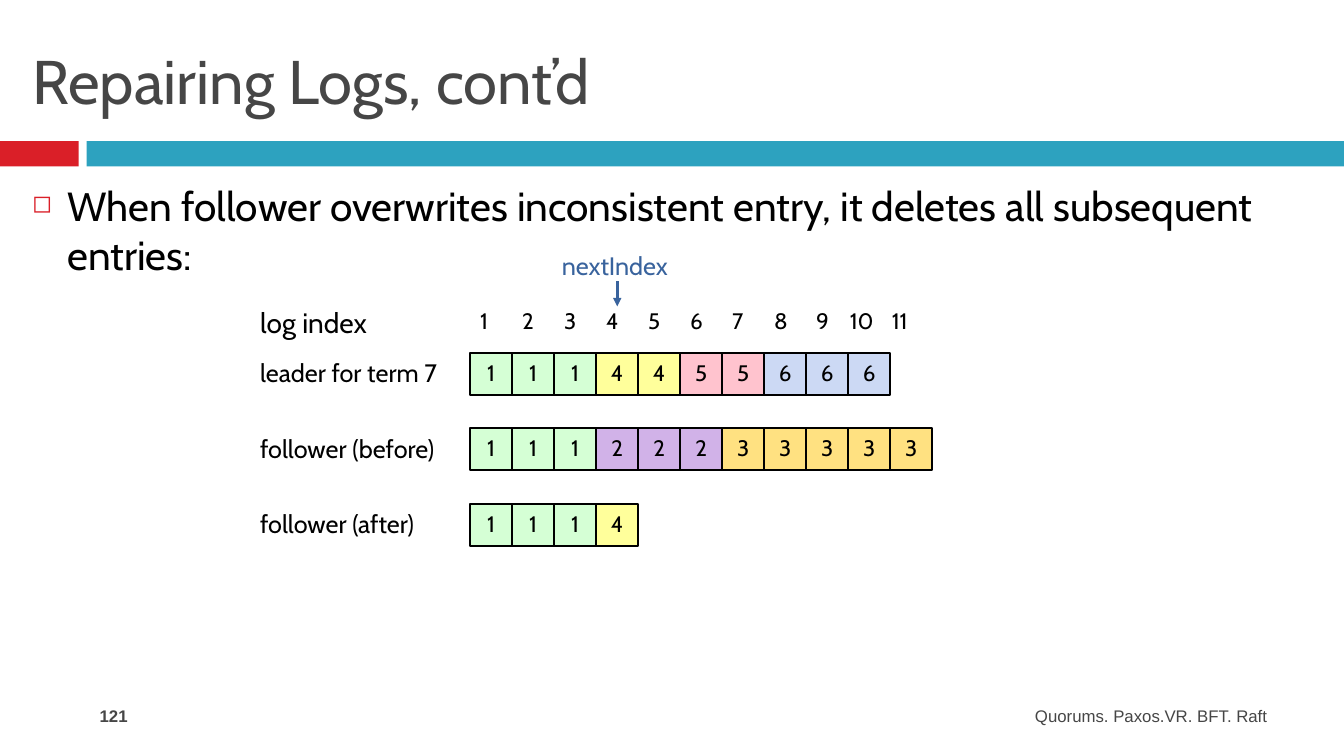
from lxml import etree
from pptx import Presentation
from pptx.dml.color import RGBColor
from pptx.enum.shapes import MSO_CONNECTOR, MSO_SHAPE
from pptx.enum.text import MSO_ANCHOR, MSO_AUTO_SIZE, PP_ALIGN
from pptx.oxml.ns import qn
from pptx.util import Inches, Pt

RECTANGLE = MSO_SHAPE.RECTANGLE
STRAIGHT = MSO_CONNECTOR.STRAIGHT
TOP, MIDDLE = MSO_ANCHOR.TOP, MSO_ANCHOR.MIDDLE
LEFT, CENTER, RIGHT = PP_ALIGN.LEFT, PP_ALIGN.CENTER, PP_ALIGN.RIGHT
NO_FIT = MSO_AUTO_SIZE.NONE

WHITE = RGBColor(0xFF, 0xFF, 0xFF)
BLACK = RGBColor(0x00, 0x00, 0x00)
GREY = RGBColor(0x46, 0x46, 0x46)
RED = RGBColor(0xDA, 0x1F, 0x28)
TEAL = RGBColor(0x2D, 0xA2, 0xBF)
BLUE = RGBColor(0x39, 0x63, 0x9D)
TERM_COLOURS = {
    1: RGBColor(0xD5, 0xFF, 0xD5),
    2: RGBColor(0xD1, 0xB2, 0xE8),
    3: RGBColor(0xFF, 0xE1, 0x81),
    4: RGBColor(0xFF, 0xFF, 0x9B),
    5: RGBColor(0xFF, 0xC3, 0xCE),
    6: RGBColor(0xCC, 0xD9, 0xF4),
}

WIDTH, HEIGHT = 13.33, 7.5
MARGIN = 0.22
CELL = 5 / 12
ROW_STEP = 0.75
LABEL_WIDTH = 5 * CELL
LOGS = [
    ("leader for term 7", [1, 1, 1, 4, 4, 5, 5, 6, 6, 6]),
    ("follower (before)", [1, 1, 1, 2, 2, 2, 3, 3, 3, 3, 3]),
    ("follower (after)", [1, 1, 1, 4]),
]
NEXT_INDEX = 4


def write(shape, text, size, colour=BLACK, font="Cabin", align=LEFT,
          anchor=TOP, spacing=None, inset=None, bold=False):
    """Set the text of a shape, format it and return its paragraph."""
    frame = shape.text_frame
    frame.text = text
    frame.word_wrap = True
    frame.auto_size = NO_FIT
    frame.vertical_anchor = anchor
    if inset is not None:
        frame.margin_left = frame.margin_right = Inches(inset)
        frame.margin_top = frame.margin_bottom = Inches(inset)
    para = frame.paragraphs[0]
    para.alignment = align
    if spacing:
        para.line_spacing = Pt(spacing)
    for span in para.runs:
        span.font.name = font
        span.font.size = Pt(size)
        span.font.bold = bold
        span.font.color.rgb = colour
    return para


def add_text(page, box, text, size, **style):
    """Add a text box at box and return its paragraph."""
    return write(page.shapes.add_textbox(*map(Inches, box)), text, size, **style)


def add_block(page, box, fill, outline=None):
    """Add a flat rectangle with an optional outline."""
    block = page.shapes.add_shape(RECTANGLE, *map(Inches, box))
    block.shadow.inherit = False
    block.fill.solid()
    block.fill.fore_color.rgb = fill
    if outline is None:
        block.line.fill.background()
    else:
        block.line.color.rgb = outline
        block.line.width = Pt(1.5)
    return block


def add_heading(page, box):
    """Place the title in box and the two-colour band below it."""
    left, top, width, height = box
    title = page.shapes.title
    title.left, title.top, title.width, title.height = map(Inches, box)
    write(title, "Repairing Logs, cont’d", 44, colour=GREY, anchor=MIDDLE)
    band_top = top + height + 0.07
    add_block(page, (0, band_top, 0.78, 0.25), RED)
    add_block(page, (0.86, band_top, WIDTH - 0.86, 0.25), TEAL)


def add_statement(page, box):
    """Add the bulleted statement."""
    para = add_text(page, box, "When follower overwrites inconsistent entry, "
                    "it deletes all subsequent entries:", 29)
    para.space_before = Pt(7)
    properties = para._p.get_or_add_pPr()
    properties.set("marL", str(Inches(0.35)))
    properties.set("indent", str(Inches(-0.35)))
    colour = etree.SubElement(properties, qn("a:buClr"))
    etree.SubElement(colour, qn("a:srgbClr"), val=str(RED))
    etree.SubElement(properties, qn("a:buSzPct"), val="60000")
    etree.SubElement(properties, qn("a:buChar"), char="◻")


def add_pointer(page, left, top):
    """Add the nextIndex label and its arrow down to the index row."""
    column = left + (NEXT_INDEX - 1) * CELL
    middle = column + CELL / 2
    add_text(page, (column - 0.34, top, 1.46, 0.28), "nextIndex", 18,
             colour=BLUE, spacing=19, inset=0)
    arrow = page.shapes.add_connector(
        STRAIGHT, Inches(middle), Inches(top + 0.27), Inches(middle), Inches(top + 0.52))
    arrow.line.color.rgb = BLUE
    arrow.line.width = Pt(2)
    etree.SubElement(arrow.line._get_or_add_ln(), qn("a:tailEnd"), type="triangle")
    etree.SubElement(arrow._element.spPr, qn("a:effectLst"))


def add_index_row(page, left, top):
    """Add the row label and the log index numbers."""
    cells_left = left + LABEL_WIDTH
    add_text(page, (left, top + 0.03, 1.25, 0.34), "log index", 20, inset=0)
    longest = max(len(terms) for _, terms in LOGS)
    for index in range(1, longest + 1):
        wide = index > 9
        shift, width = (CELL / 5, 0.58) if wide else (0, CELL)
        add_text(page, (cells_left + (index - 1) * CELL - shift, top, width, 0.37),
                 str(index), 16)


def add_log(page, left, top, label, terms):
    """Add one labelled log, with a cell for each entry's term."""
    add_text(page, (left, top + 0.08, LABEL_WIDTH, 0.28), label, 18,
             spacing=19, inset=0)
    for column, term in enumerate(terms):
        box = (left + LABEL_WIDTH + column * CELL, top, CELL, CELL)
        entry = add_block(page, box, TERM_COLOURS[term], BLACK)
        write(entry, str(term), 16, align=CENTER, anchor=MIDDLE, spacing=17, inset=0)


def add_diagram(page, left, top):
    """Add the pointer, the index row and the logs."""
    add_pointer(page, left + LABEL_WIDTH, top)
    add_index_row(page, left, top + 0.48)
    for row, (label, terms) in enumerate(LOGS):
        add_log(page, left, top + 0.98 + row * ROW_STEP, label, terms)


def add_footer(page, top, height):
    """Add the page number and the lecture topic."""
    add_text(page, (0.89, top, 2.89, height), "121", 12,
             colour=GREY, font="Arial", bold=True)
    add_text(page, (7.56, top, 5.11, height), "Quorums. Paxos.VR. BFT. Raft", 12,
             colour=GREY, font="Arial", align=RIGHT)


def main():
    """Build and save the deck."""
    deck = Presentation()
    deck.slide_width, deck.slide_height = Inches(WIDTH), Inches(HEIGHT)
    page = deck.slides.add_slide(deck.slide_layouts[5])
    page.background.fill.solid()
    page.background.fill.fore_color.rgb = WHITE
    content_width = WIDTH - 2 * MARGIN
    add_heading(page, (MARGIN, 0.25, content_width, 1.08))
    add_statement(page, (MARGIN, 1.75, content_width, 5.58))
    add_diagram(page, 2.58, 2.52)
    add_footer(page, 6.95, 0.4)
    deck.save("out.pptx")


if __name__ == "__main__":
    main()
